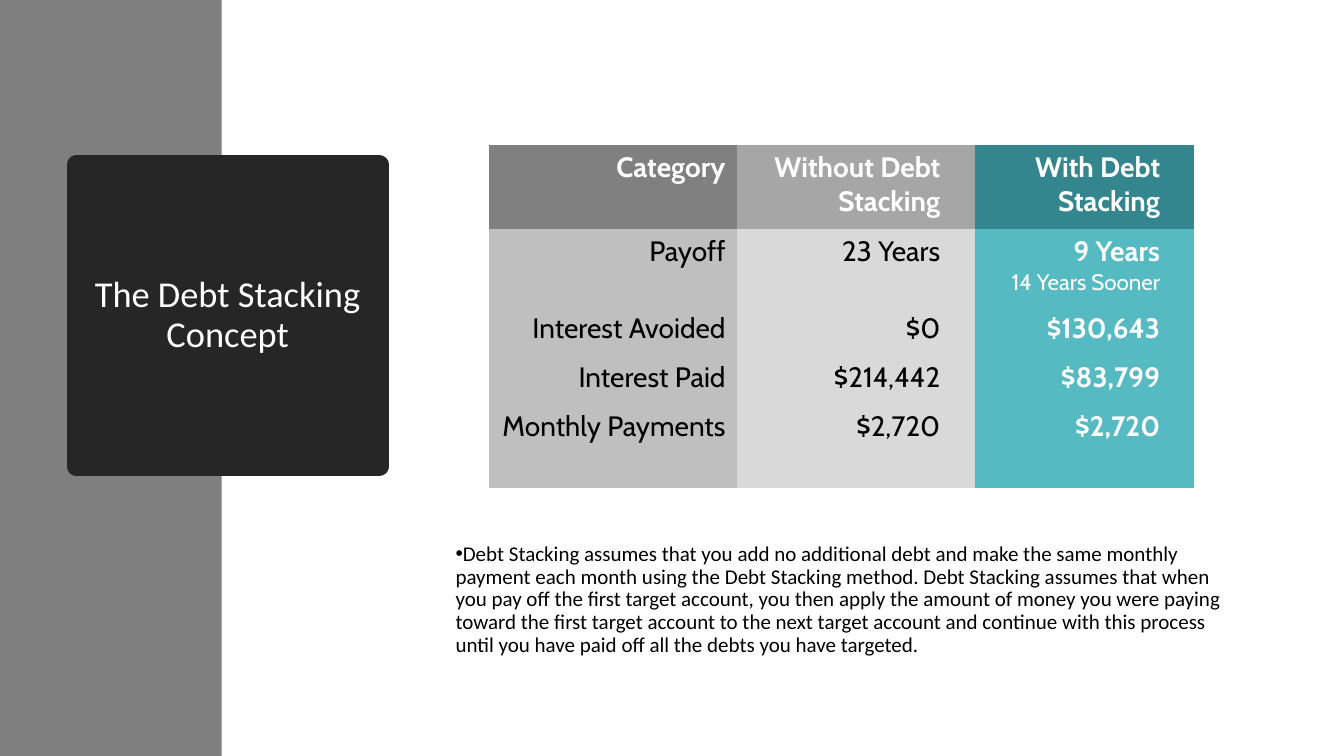
from lxml import etree
from pptx import Presentation
from pptx.dml.color import RGBColor
from pptx.enum import shapes, text
from pptx.oxml import ns
from pptx.util import Pt

HUES = {
    "band": "7F7F7F", "dark": "262626", "white": "FFFFFF", "black": "000000",
    "head": ["808080", "A6A6A6", "33868D"],
    "body": ["BFBFBF", "D9D9D9", "56BAC2"],
}
ROWS = [
    ["Category", "Without Debt Stacking", "With Debt Stacking"],
    ["Payoff", "23 Years", "9 Years\v14 Years Sooner"],
    ["Interest Avoided", "$0", "$130,643"],
    ["Interest Paid", "$214,442", "$83,799"],
    ["Monthly Payments", "$2,720", "$2,720"],
]
WIDTHS = [177.1, 169.9, 157]
HEIGHTS = [59.8, 54.7, 35.3, 35.3, 59.8]
PLAIN = "{2D5ABB26-0587-4C30-8999-92F81FD0307C}"  # table style without grid
NOTE = (
    "Debt Stacking assumes that you add no additional debt and make the same "
    "monthly payment each month using the Debt Stacking method. Debt Stacking "
    "assumes that when you pay off the first target account, you then apply the "
    "amount of money you were paying toward the first target account to the next "
    "target account and continue with this process until you have paid off all "
    "the debts you have targeted."
)


def paint(item, hue):
    item.fill.solid()
    item.fill.fore_color.rgb = RGBColor.from_string(hue)


def style(run, face, size, hue, bold=False):
    font = run.font
    font.name, font.size, font.bold = face, Pt(size), bold
    font.color.rgb = RGBColor.from_string(hue)


def place(item, left, top, width, height):
    item.left, item.top = Pt(left), Pt(top)
    item.width, item.height = Pt(width), Pt(height)


def add_band(slide):
    band = slide.shapes.add_shape(shapes.MSO_SHAPE.RECTANGLE, 0, 0, Pt(158.4), Pt(540))
    band.shadow.inherit = False
    paint(band, HUES["band"])
    band.line.fill.background()
    # Send behind the placeholders
    band.element.getparent().insert(2, band.element)


def fill_holder(holder, words, size, hue):
    frame = holder.text_frame
    frame.text = words
    frame.word_wrap = True
    frame.auto_size = text.MSO_AUTO_SIZE.NONE
    para = frame.paragraphs[0]
    para.line_spacing = 0.9
    para.space_before = Pt(0)
    style(para.runs[0], "Calibri", size, hue)
    return para


def set_title(title):
    place(title, 54.7, 117.4, 216, 216)
    paint(title, HUES["dark"])
    title.line.color.rgb = RGBColor.from_string(HUES["dark"])
    title.line.width = Pt(13.75)
    para = fill_holder(title, "The Debt Stacking Concept", 26, HUES["white"])
    para.alignment = text.PP_ALIGN.CENTER
    title.text_frame.vertical_anchor = text.MSO_ANCHOR.MIDDLE


def set_note(note):
    place(note, 318.2, 384.5, 565.9, 101.5)
    para = fill_holder(note, NOTE, 15, HUES["black"])
    para.alignment = text.PP_ALIGN.LEFT
    para.space_after = Pt(6)
    note.text_frame.vertical_anchor = text.MSO_ANCHOR.TOP
    # Bullet with a hanging indent
    props = para._p.get_or_add_pPr()
    props.set("marL", "0")
    props.set("indent", str(-Pt(18)))
    etree.SubElement(props, ns.qn("a:buChar"), char="•")


def set_cell(cell, words, row, col):
    paint(cell, HUES["body" if row else "head"][col])
    cell.margin_left = Pt(8)
    cell.margin_right = Pt(24.5 if col else 8)
    cell.margin_top = cell.margin_bottom = Pt(4)
    cell.vertical_anchor = text.MSO_ANCHOR.TOP
    para = cell.text_frame.paragraphs[0]
    para.text = words
    para.alignment = text.PP_ALIGN.RIGHT
    strong = row == 0 or col == 2
    hue = HUES["white" if strong else "black"]
    first, *rest = para.runs
    style(first, "Cabin", 20, hue, strong)
    for run in rest:
        style(run, "Cabin", 16, hue)


def add_grid(slide):
    frame = slide.shapes.add_table(
        len(ROWS), len(WIDTHS), Pt(349.2), Pt(103.7), Pt(sum(WIDTHS)), Pt(sum(HEIGHTS)))
    grid = frame.table
    grid.horz_banding = False
    for mark in frame.element.iter(ns.qn("a:tableStyleId")):
        mark.text = PLAIN
    for col, width in zip(grid.columns, WIDTHS):
        col.width = Pt(width)
    for row, height in zip(grid.rows, HEIGHTS):
        row.height = Pt(height)
    for r, line in enumerate(ROWS):
        for c, words in enumerate(line):
            set_cell(grid.cell(r, c), words, r, c)


def main():
    deck = Presentation()
    deck.slide_width, deck.slide_height = Pt(960), Pt(540)
    slide = deck.slides.add_slide(deck.slide_layouts[1])
    add_band(slide)
    set_title(slide.shapes.title)
    set_note(slide.placeholders[1])
    add_grid(slide)
    deck.save("out.pptx")


if __name__ == "__main__":
    main()
